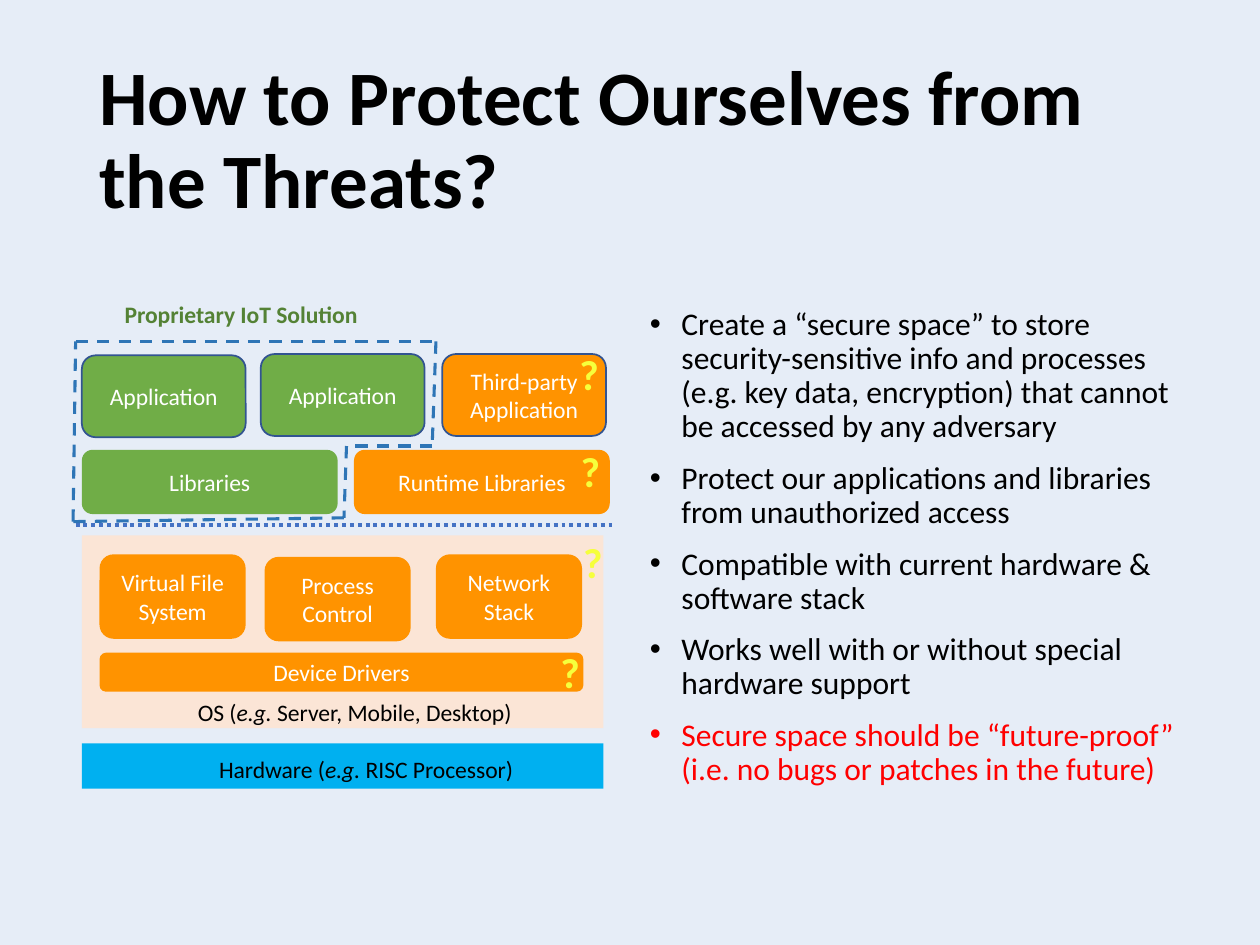
"""Builds the slide on protecting an IoT software stack."""
from dataclasses import dataclass

import lxml.etree
import pptx
import pptx.dml.color
import pptx.enum.dml
import pptx.enum.shapes
import pptx.enum.text
import pptx.oxml.ns
import pptx.util

Inches = pptx.util.Inches
Shape = pptx.enum.shapes.MSO_SHAPE
Dash = pptx.enum.dml.MSO_LINE
Align = pptx.enum.text.PP_ALIGN
Anchor = pptx.enum.text.MSO_ANCHOR
Fit = pptx.enum.text.MSO_AUTO_SIZE


@dataclass(frozen=True)
class Theme:
    """Colours, font and type sizes of the slide."""
    font: str = "Calibri"
    background: str = "E6EDF7"
    ink: str = "000000"
    light: str = "FFFFFF"
    alert: str = "FF0000"
    trusted: str = "70AD47"
    untrusted: str = "FF9300"
    system: str = "FBE5D6"
    hardware: str = "00B0F0"
    outline: str = "325491"
    boundary: str = "4472C4"
    enclosure: str = "2E75B6"
    caption: str = "548235"
    doubt: str = "F6FF3C"
    title_size: float = 44
    body_size: float = 18
    label_size: float = 13.5
    doubt_size: float = 24


THEME = Theme()

BULLETS = [
    ("Create a “secure space” to store security-sensitive info and processes "
     "(e.g. key data, encryption) that cannot be accessed by any adversary", THEME.ink),
    ("Protect our applications and libraries from unauthorized access", THEME.ink),
    ("Compatible with current hardware & software stack", THEME.ink),
    ("Works well with or without special hardware support", THEME.ink),
    ("Secure space should be “future-proof” (i.e. no bugs or patches in the future)",
     THEME.alert),
]

BLOCKS = [
    ("Device Drivers", (0.79, 5.18, 3.84, 0.31), THEME.untrusted, None),
    ("Virtual File System", (0.79, 4.4, 1.16, 0.67), THEME.untrusted, None),
    ("Network Stack", (3.46, 4.4, 1.16, 0.67), THEME.untrusted, None),
    ("Process Control", (2.1, 4.42, 1.16, 0.67), THEME.untrusted, None),
    ("Libraries", (0.65, 3.57, 2.03, 0.51), THEME.trusted, None),
    ("Runtime Libraries", (2.81, 3.57, 2.03, 0.51), THEME.untrusted, None),
    ("Application", (0.65, 2.82, 1.3, 0.65), THEME.trusted, THEME.outline),
    ("Application", (2.07, 2.81, 1.3, 0.65), THEME.trusted, THEME.outline),
    ("Third-party Application", (3.51, 2.81, 1.3, 0.65), THEME.untrusted, THEME.outline),
]

ENCLOSURE = [(0.6, 2.71), (3.46, 2.71), (3.43, 3.54), (2.75, 3.54),
             (2.73, 4.11), (0.58, 4.14), (0.6, 2.71)]

DOUBTS = [(4.5, 2.72), (4.51, 3.49), (4.53, 4.21), (4.35, 5.08)]


def rgb(code):
    """Turn a hex code into a colour."""
    return pptx.dml.color.RGBColor.from_string(code)


def apply_format(target, values):
    """Set each attribute named in a dict of format values."""
    for name, value in values.items():
        setattr(target, name, value)


def add_span(para, text, size, color, **values):
    """Add one formatted run to a paragraph."""
    span = para.add_run()
    span.text = text
    apply_format(span.font, {"name": THEME.font, "size": pptx.util.Pt(size), **values})
    span.font.color.rgb = rgb(color)


def add_text_box(page, place, **values):
    """Add an empty text box and return its text frame."""
    frame = page.shapes.add_textbox(*map(Inches, place)).text_frame
    apply_format(frame, {"word_wrap": True, "auto_size": Fit.NONE, **values})
    return frame


def add_label(page, place, spans, size, color, wrap=False, align=Align.LEFT, bold=False):
    """Add a one-paragraph label made of text and italic pairs."""
    frame = add_text_box(page, place, word_wrap=wrap, auto_size=Fit.SHAPE_TO_FIT_TEXT)
    para = frame.paragraphs[0]
    para.alignment = align
    for text, italic in spans:
        add_span(para, text, size, color, italic=italic, bold=bold)


def add_block(page, kind, place, fill, outline=None, text=None):
    """Add a filled block with an optional outline and centred text."""
    block = page.shapes.add_shape(kind, *map(Inches, place))
    block.shadow.inherit = False
    block.fill.solid()
    block.fill.fore_color.rgb = rgb(fill)
    if outline:
        block.line.color.rgb = rgb(outline)
        block.line.width = pptx.util.Pt(1)
    else:
        block.line.fill.background()
    if text:
        apply_format(block.text_frame, {"word_wrap": True, "vertical_anchor": Anchor.MIDDLE})
        para = block.text_frame.paragraphs[0]
        para.alignment = Align.CENTER
        add_span(para, text, THEME.label_size, THEME.light)


def add_line(page, start, end, color, width, dash):
    """Add a straight dashed line without a shadow."""
    line = page.shapes.add_connector(
        pptx.enum.shapes.MSO_CONNECTOR.STRAIGHT, *map(Inches, start + end))
    line.line.color.rgb = rgb(color)
    apply_format(line.line, {"width": pptx.util.Pt(width), "dash_style": dash})
    lxml.etree.SubElement(line._element.spPr, pptx.oxml.ns.qn("a:effectLst"))


def add_title(page):
    """Add the slide title."""
    frame = add_text_box(page, (0.69, 0.4, 8.62, 1.45), vertical_anchor=Anchor.MIDDLE)
    para = frame.paragraphs[0]
    para.line_spacing = 0.9
    add_span(para, "How to Protect Ourselves from the Threats?",
             THEME.title_size, THEME.ink, bold=True)


def add_bullets(page):
    """Add the bulleted list of requirements."""
    frame = add_text_box(page, (5.06, 2.4, 4.38, 3.89))
    for index, (text, color) in enumerate(BULLETS):
        para = frame.add_paragraph() if index else frame.paragraphs[0]
        apply_format(para, {"line_spacing": 0.9, "space_before": pptx.util.Pt(10)})
        properties = para._p.get_or_add_pPr()
        properties.set("marL", str(Inches(0.25)))
        properties.set("indent", str(Inches(-0.25)))
        for tag, key, value in (("a:buFont", "typeface", "Arial"), ("a:buChar", "char", "•")):
            lxml.etree.SubElement(properties, pptx.oxml.ns.qn(tag)).set(key, value)
        add_span(para, text, THEME.body_size, color)


def add_stack(page):
    """Add the layers of hardware, operating system and applications."""
    add_block(page, Shape.RECTANGLE, (0.65, 5.9, 4.14, 0.36), THEME.hardware)
    add_block(page, Shape.RECTANGLE, (0.65, 4.25, 4.14, 1.53), THEME.system)
    add_label(page, (1.64, 5.94, 2.61, 0.33),
              [("Hardware (", False), ("e.g. ", True), ("RISC Processor)", False)],
              THEME.label_size, THEME.ink)
    add_label(page, (1.37, 5.49, 2.89, 0.33),
              [("OS (", False), ("e.g. ", True), ("Server, Mobile, Desktop)", False)],
              THEME.label_size, THEME.ink, wrap=True, align=Align.CENTER)
    for text, place, fill, outline in BLOCKS:
        add_block(page, Shape.ROUNDED_RECTANGLE, place, fill, outline, text)
    add_line(page, (0.6, 4.17), (4.88, 4.17), THEME.boundary, 2.25, Dash.ROUND_DOT)


def main():
    """Build the slide and save it."""
    deck = pptx.Presentation()
    apply_format(deck, {"slide_width": Inches(10), "slide_height": Inches(7.5)})
    page = deck.slides.add_slide(deck.slide_layouts[6])
    page.background.fill.solid()
    page.background.fill.fore_color.rgb = rgb(THEME.background)
    add_title(page)
    add_stack(page)
    for start, end in zip(ENCLOSURE, ENCLOSURE[1:]):
        add_line(page, start, end, THEME.enclosure, 1.75, Dash.DASH)
    add_label(page, (0.89, 2.33, 2.07, 0.33), [("Proprietary IoT Solution", False)],
              THEME.label_size, THEME.caption, bold=True)
    for corner in DOUBTS:
        add_label(page, corner + (0.36, 0.5), [("?", False)],
                  THEME.doubt_size, THEME.doubt, bold=True)
    add_bullets(page)
    deck.save("out.pptx")


if __name__ == "__main__":
    main()
